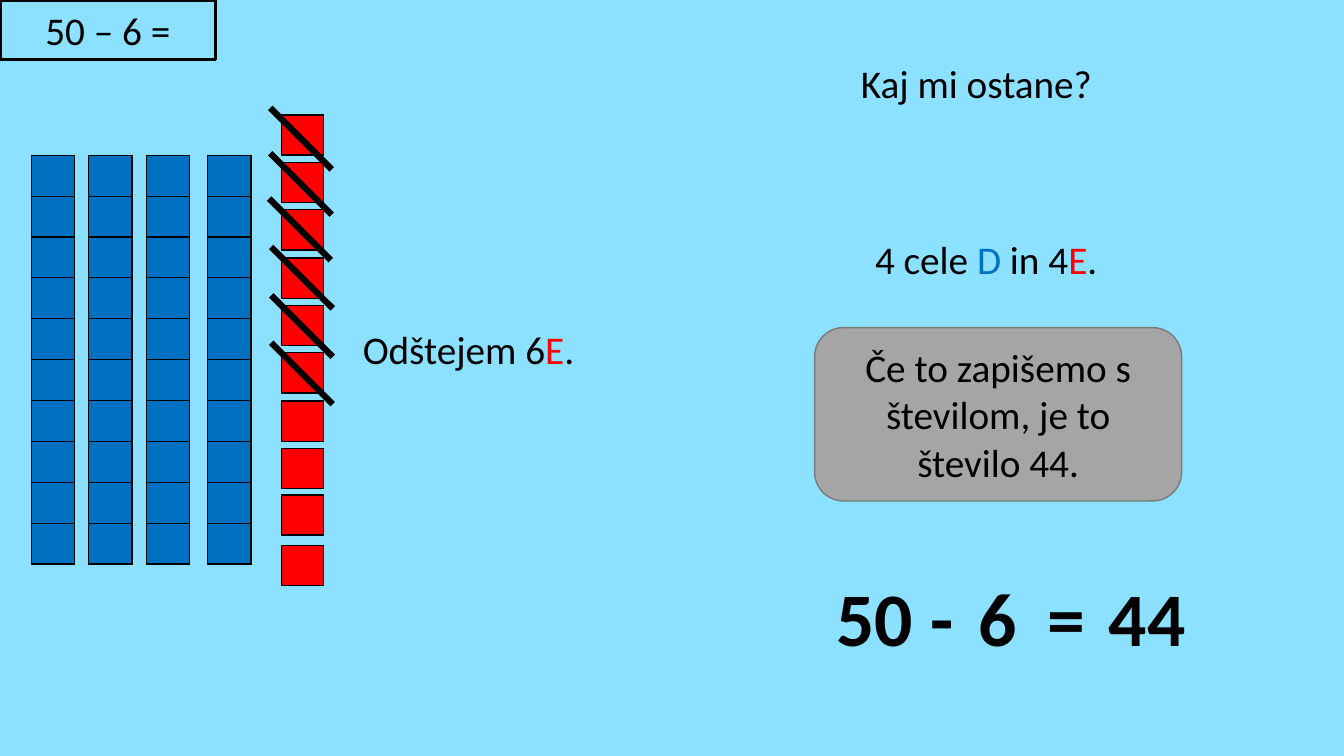
"""Build the slide that subtracts 6 from 50 with tens columns and unit squares."""
from dataclasses import dataclass

from lxml.etree import SubElement
from pptx import Presentation
from pptx.dml.color import RGBColor
from pptx.enum.shapes import MSO_CONNECTOR, MSO_SHAPE
from pptx.enum.text import MSO_ANCHOR, MSO_AUTO_SIZE, PP_ALIGN
from pptx.oxml.ns import qn
from pptx.util import Emu, Pt


@dataclass(frozen=True)
class Theme:
    background: str = "8BE1FF"
    tens: str = "0070C0"
    units: str = "FF0000"
    ink: str = "000000"
    panel: str = "A5A5A5"
    panel_edge: str = "7A7A7A"
    font: str = "Calibri"
    body: int = 28
    result: int = 54


PX = 9144
theme = Theme()


def write(shape, runs, size=theme.body, bold=False, align=PP_ALIGN.LEFT, spacing=None):
    frame = shape.text_frame
    frame.word_wrap = True
    para = frame.paragraphs[0]
    para.alignment = align
    para.line_spacing = spacing
    for text, color in runs:
        span = para.add_run()
        span.text = text
        span.font.name = theme.font
        span.font.size = Pt(size)
        span.font.bold = bold
        span.font.color.rgb = RGBColor.from_string(color)
    return frame


def add_block(page, kind, bounds, fill, edge, weight):
    block = page.shapes.add_shape(kind, *[Emu(length * PX) for length in bounds])
    block.shadow.inherit = False
    if fill:
        block.fill.solid()
        block.fill.fore_color.rgb = RGBColor.from_string(fill)
    else:
        block.fill.background()
    block.line.color.rgb = RGBColor.from_string(edge)
    block.line.width = Pt(weight)
    return block


deck = Presentation()
deck.slide_width, deck.slide_height = Emu(1333 * PX), Emu(750 * PX)
page = deck.slides.add_slide(deck.slide_layouts[6])
page.background.fill.solid()
page.background.fill.fore_color.rgb = RGBColor.from_string(theme.background)

for left in (31, 88, 145, 206):
    table = page.shapes.add_table(
        10, 1, Emu(left * PX), Emu(154 * PX), Emu(43 * PX), Emu(390 * PX)
    ).table
    table.first_row = table.horz_banding = False
    for cell in table.iter_cells():
        properties = cell._tc.get_or_add_tcPr()
        for side in ("a:lnL", "a:lnR", "a:lnT", "a:lnB"):
            border = SubElement(properties, qn(side), w=str(Pt(1)))
            SubElement(SubElement(border, qn("a:solidFill")), qn("a:srgbClr"), val=theme.ink)
        cell.fill.solid()
        cell.fill.fore_color.rgb = RGBColor.from_string(theme.tens)

for top in (114, 161, 208, 256, 303, 350, 398, 445, 491, 541):
    add_block(page, MSO_SHAPE.RECTANGLE, (279, top, 42, 40), theme.units, theme.ink, 1)

for left, top in ((268, 107), (268, 152), (267, 197), (269, 245), (269, 293), (269, 340)):
    ends = [Emu(length * PX) for length in (left, top, left + 61, top + 61)]
    strike = page.shapes.add_connector(MSO_CONNECTOR.STRAIGHT, *ends)
    strike.line.color.rgb = RGBColor.from_string(theme.ink)
    strike.line.width = Pt(4.5)
    SubElement(strike._element.spPr, qn("a:effectLst"))

statements = (
    ((350, 323, 714, 109),
     [("Odštejem 6", theme.ink), ("E", theme.units), (".", theme.ink)]),
    ((844, 59, 265, 109), [("Kaj mi ostane?", theme.ink)]),
    ((858, 234, 265, 109),
     [("4 cele ", theme.ink), ("D", theme.tens), (" in 4", theme.ink),
      ("E", theme.units), (".", theme.ink)]),
)
for bounds, runs in statements:
    box = page.shapes.add_textbox(*[Emu(length * PX) for length in bounds])
    write(box, runs, spacing=0.9)

panels = (
    (MSO_SHAPE.ROUNDED_RECTANGLE, (808, 325, 364, 172), theme.panel, theme.panel_edge, 1,
     "Če to zapišemo s številom, je to število 44."),
    (MSO_SHAPE.RECTANGLE, (0, 0, 214, 59), None, theme.ink, 2.25, "50 – 6 ="),
)
for kind, bounds, fill, edge, weight, text in panels:
    panel = add_block(page, kind, bounds, fill, edge, weight)
    frame = write(panel, [(text, theme.ink)], align=PP_ALIGN.CENTER)
    frame.vertical_anchor = MSO_ANCHOR.MIDDLE

for left, width, text in (
    (820, 117, "50"), (913, 58, "-"), (961, 58, "6"), (1029, 93, "="), (1090, 130, "44")
):
    box = page.shapes.add_textbox(
        Emu(left * PX), Emu(561 * PX), Emu(width * PX), Emu(101 * PX)
    )
    frame = write(box, [(text, theme.ink)], theme.result, True)
    frame.auto_size = MSO_AUTO_SIZE.SHAPE_TO_FIT_TEXT

deck.save("out.pptx")
